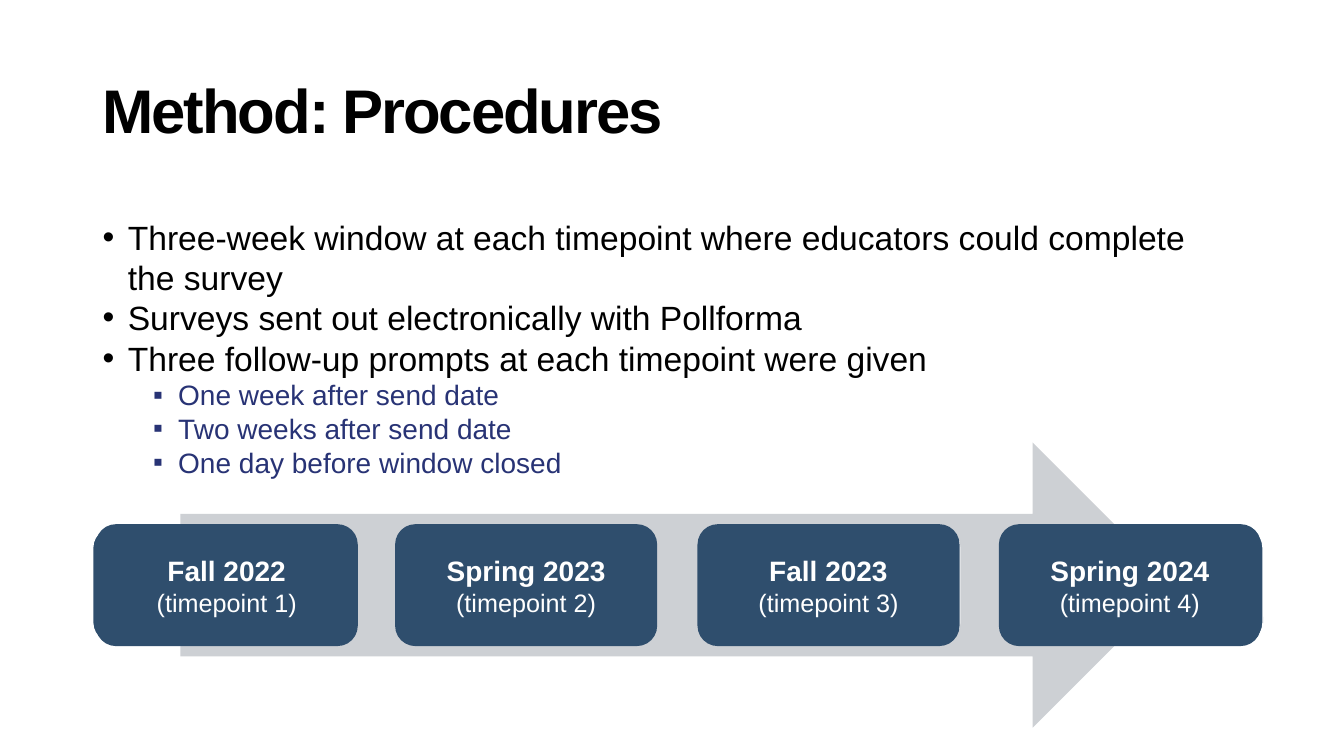
from lxml import etree
from pptx import Presentation
from pptx.dml.color import RGBColor
from pptx.enum.shapes import MSO_SHAPE as SHAPE
from pptx.enum.text import MSO_ANCHOR as ANCHOR, PP_ALIGN as ALIGN
from pptx.oxml.ns import qn
from pptx.util import Pt

TITLE = "Method: Procedures"
BULLETS = [
    (0, "Three-week window at each timepoint where educators could complete the survey"),
    (0, "Surveys sent out electronically with Pollforma"),
    (0, "Three follow-up prompts at each timepoint were given"),
    (1, "One week after send date"),
    (1, "Two weeks after send date"),
    (1, "One day before window closed"),
]
TIMEPOINTS = [
    (68.4, "Fall 2022", "(timepoint 1)"),
    (282.24, "Spring 2023", "(timepoint 2)"),
    (498.24, "Fall 2023", "(timepoint 3)"),
    (713.52, "Spring 2024", "(timepoint 4)"),
]

BLACK = RGBColor(0, 0, 0)
WHITE = RGBColor(0xFF, 0xFF, 0xFF)
INDIGO = RGBColor(0x28, 0x33, 0x75)
NAVY = RGBColor(0x2F, 0x4E, 0x6D)
GRAY = RGBColor(0xCD, 0xD0, 0xD4)
LEVELS = [("•", 18, 24, BLACK), ("▪", 54, 20, INDIGO)]
HANGING = 18
LEFT = 66.24
STEP = 216.72


def add_run(p, text, size, color, bold=False):
    r = p.add_run()
    r.text = text
    r.font.name = "Arial"
    r.font.size = Pt(size)
    r.font.bold = bold
    r.font.color.rgb = color
    return r


def add_text_box(slide, x, y, w, h):
    tf = slide.shapes.add_textbox(Pt(x), Pt(y), Pt(w), Pt(h)).text_frame
    tf.word_wrap = True
    return tf


def add_filled(slide, kind, x, y, w, h, color):
    sp = slide.shapes.add_shape(kind, Pt(x), Pt(y), Pt(w), Pt(h))
    sp.shadow.inherit = False
    sp.fill.solid()
    sp.fill.fore_color.rgb = color
    sp.line.fill.background()
    return sp


def set_bullet(p, char, indent):
    pPr = p._p.get_or_add_pPr()
    pPr.set("marL", str(Pt(indent)))
    pPr.set("indent", str(-Pt(HANGING)))
    etree.SubElement(pPr, qn("a:buFont")).set("typeface", "Arial")
    etree.SubElement(pPr, qn("a:buChar")).set("char", char)


prs = Presentation()
prs.slide_width, prs.slide_height = Pt(960), Pt(540)
slide = prs.slides.add_slide(prs.slide_layouts[6])

tf = add_text_box(slide, LEFT, 28.8, 828, 104.4)
tf.vertical_anchor = ANCHOR.MIDDLE
p = tf.paragraphs[0]
p.line_spacing = 0.9
r = add_run(p, TITLE, 44, BLACK, True)
r.font._element.set("spc", "-150")

tf = add_text_box(slide, LEFT, 151.2, 809.28, 203.76)
for i, (level, text) in enumerate(BULLETS):
    p = tf.add_paragraph() if i else tf.paragraphs[0]
    char, indent, size, color = LEVELS[level]
    p.level = level
    set_bullet(p, char, indent)
    add_run(p, text, size, color)

add_filled(slide, SHAPE.RIGHT_ARROW, 128.88, 316.08, 710.64, 203.76, GRAY)

for i in range(len(TIMEPOINTS)):
    sp = add_filled(slide, SHAPE.ROUNDED_RECTANGLE, LEFT + i * STEP, 377.28, 185.76, 81.36, NAVY)
    sp.line.color.rgb = WHITE
    sp.line.width = Pt(1)

for x, term, label in TIMEPOINTS:
    sp = add_filled(slide, SHAPE.ROUNDED_RECTANGLE, x, 374.4, 187.2, 87.12, NAVY)
    tf = sp.text_frame
    tf.word_wrap = True
    tf.vertical_anchor = ANCHOR.MIDDLE
    p = tf.paragraphs[0]
    p.alignment = ALIGN.CENTER
    add_run(p, term, 20, WHITE, True)
    p = tf.add_paragraph()
    p.alignment = ALIGN.CENTER
    add_run(p, label, 18, WHITE)

prs.save("out.pptx")
